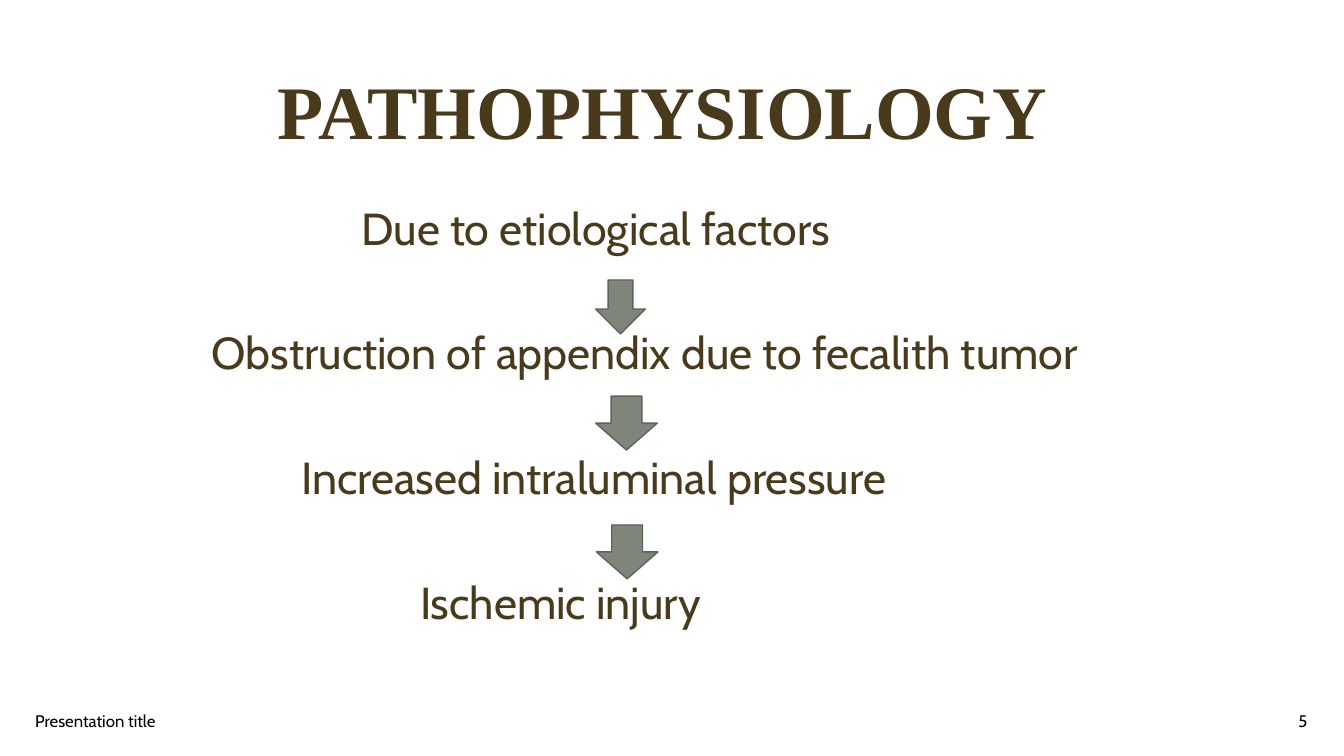
from dataclasses import dataclass

from pptx import Presentation
from pptx.dml.color import RGBColor
from pptx.enum.shapes import MSO_SHAPE
from pptx.enum.text import MSO_ANCHOR as Anchor, PP_ALIGN as Align
from pptx.util import Pt


@dataclass(frozen=True)
class Theme:
    ink: RGBColor = RGBColor(0x4A, 0x3A, 0x1C)
    footer_ink: RGBColor = RGBColor(0, 0, 0)
    arrow_fill: RGBColor = RGBColor(0x7E, 0x86, 0x79)
    arrow_line: RGBColor = RGBColor(0x5D, 0x63, 0x5A)
    title_font: str = "Times New Roman"
    body_font: str = "Cabin"
    title_size: int = 54
    body_size: int = 32
    footer_size: int = 12


THEME = Theme()

STEPS = [
    ("Due to etiological factors", 185),
    ("Obstruction of appendix due to fecalith tumor", 78),
    ("Increased intraluminal pressure", 142),
    ("Ischemic injury", 227),
]
FIRST_STEP_GAP = 10
STEP_GAP = 54.5

ARROWS = [(425.5, 200, 35.5), (425.5, 283, 44), (426, 375, 44)]
ARROW_HEIGHT = 38.5


def add_text_frame(slide, left, top, width, height, anchor):
    text_box = slide.shapes.add_textbox(Pt(left), Pt(top), Pt(width), Pt(height))
    text_frame = text_box.text_frame
    text_frame.word_wrap = True
    text_frame.vertical_anchor = anchor
    return text_frame


def add_run(paragraph, text, font_name, size, color, bold=False):
    run = paragraph.add_run()
    run.text = text
    run.font.name = font_name
    run.font.size = Pt(size)
    run.font.color.rgb = color
    run.font.bold = bold


def add_title(slide, text):
    text_frame = add_text_frame(slide, 59.5, 30, 828, 104.5, Anchor.MIDDLE)
    paragraph = text_frame.paragraphs[0]
    paragraph.alignment = Align.CENTER
    paragraph.line_spacing = 0.9
    add_run(paragraph, text, THEME.title_font, THEME.title_size, THEME.ink, bold=True)


def add_steps(slide, steps):
    text_frame = add_text_frame(slide, 66, 144, 828, 344, Anchor.TOP)
    for index, (text, indent) in enumerate(steps):
        paragraph = text_frame.add_paragraph() if index else text_frame.paragraphs[0]
        paragraph.line_spacing = 0.9
        paragraph.space_before = Pt(STEP_GAP if index else FIRST_STEP_GAP)
        properties = paragraph._p.get_or_add_pPr()
        properties.set("marL", str(Pt(indent)))
        properties.set("indent", "0")
        add_run(paragraph, text, THEME.body_font, THEME.body_size, THEME.ink)


def add_footer(slide, text, left, width, alignment):
    text_frame = add_text_frame(slide, left, 500.5, width, 29, Anchor.MIDDLE)
    paragraph = text_frame.paragraphs[0]
    paragraph.alignment = alignment
    add_run(paragraph, text, THEME.body_font, THEME.footer_size, THEME.footer_ink)


def add_down_arrow(slide, left, top, width):
    arrow = slide.shapes.add_shape(
        MSO_SHAPE.DOWN_ARROW, Pt(left), Pt(top), Pt(width), Pt(ARROW_HEIGHT)
    )
    arrow.shadow.inherit = False
    arrow.fill.solid()
    arrow.fill.fore_color.rgb = THEME.arrow_fill
    arrow.line.color.rgb = THEME.arrow_line
    arrow.line.width = Pt(1)


def main():
    presentation = Presentation()
    presentation.slide_width = Pt(960)
    presentation.slide_height = Pt(540)
    slide = presentation.slides.add_slide(presentation.slide_layouts[6])

    add_title(slide, "PATHOPHYSIOLOGY")
    add_steps(slide, STEPS)
    add_footer(slide, "Presentation title", 18, 324, Align.LEFT)
    add_footer(slide, "5", 725, 216, Align.RIGHT)
    for left, top, width in ARROWS:
        add_down_arrow(slide, left, top, width)

    presentation.save("out.pptx")


if __name__ == "__main__":
    main()
